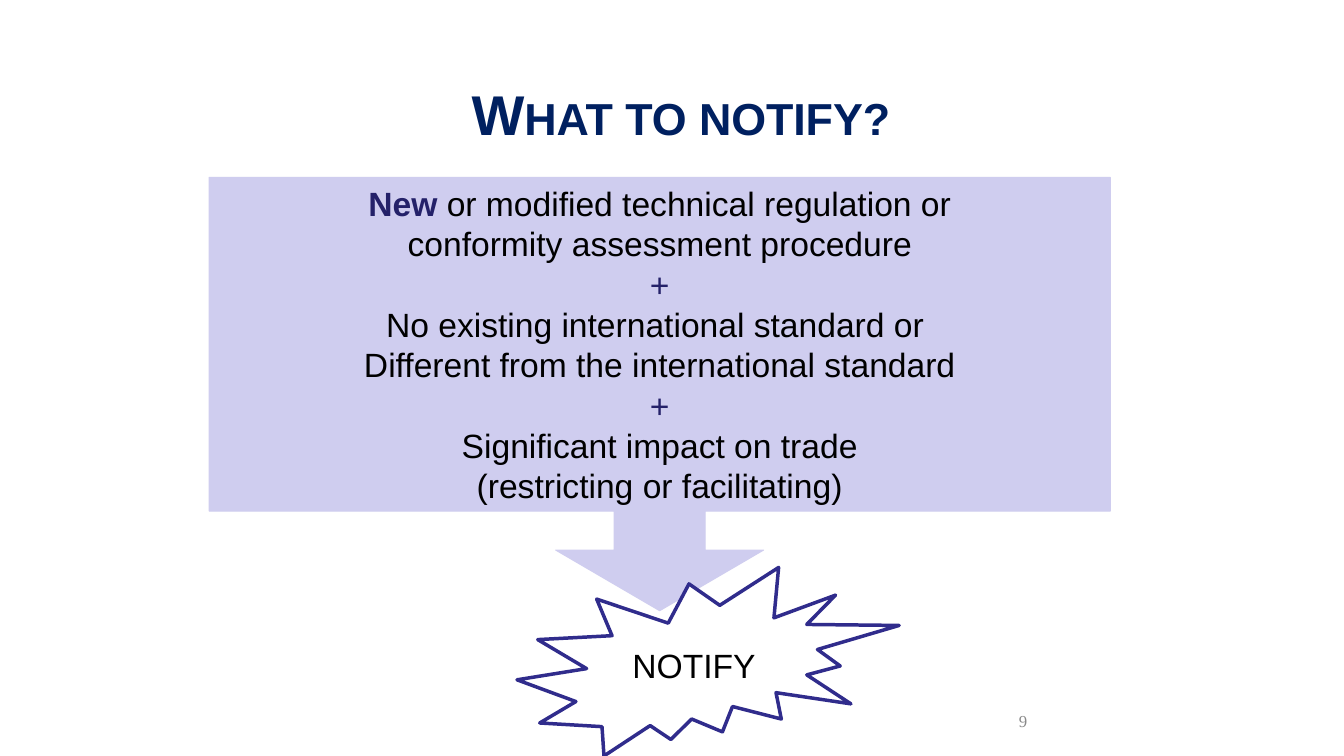
from pptx import Presentation
from pptx import util as u
from pptx.dml.color import RGBColor
from pptx.enum import shapes, text

NAVY, INDIGO, PURPLE = "002060", "242169", "302C8C"
LAVENDER, BLACK, WHITE, GREY = "CFCDEF", "000000", "FFFFFF", "898989"

CONDITIONS = [
    [("New ", INDIGO, True), ("or modified technical regulation or", BLACK, False)],
    [("conformity assessment procedure", BLACK, False)],
    [("+", INDIGO, False)],
    [("No existing international standard or ", BLACK, False)],
    [("Different from the international standard", BLACK, False)],
    [("+", INDIGO, False)],
    [("Significant impact on trade", BLACK, False)],
    [("(restricting or facilitating)", BLACK, False)],
]


def rgb(colour):
    """Turn a hex string into a colour."""
    return RGBColor.from_string(colour)


def cm_box(*lengths):
    """Turn left, top, width and height in centimetres into lengths."""
    return [u.Cm(length) for length in lengths]


def add_run(paragraph, words, size, colour, bold=False, font="Arial"):
    """Append one formatted run to a paragraph."""
    run = paragraph.add_run()
    run.text = words
    run.font.name = font
    run.font.size = u.Pt(size)
    run.font.bold = bold
    run.font.color.rgb = rgb(colour)
    return run


def write_lines(frame, lines, size=24):
    """Fill a text frame with centred lines made of coloured runs."""
    frame.vertical_anchor = text.MSO_ANCHOR.MIDDLE
    frame.word_wrap = False
    for index, line in enumerate(lines):
        paragraph = frame.paragraphs[0] if index == 0 else frame.add_paragraph()
        paragraph.alignment = text.PP_ALIGN.CENTER
        for words, colour, bold in line:
            add_run(paragraph, words, size, colour, bold)


def add_figure(slide, kind, box, fill, line, line_width, lines):
    """Add a filled, outlined preset shape with centred text."""
    figure = slide.shapes.add_shape(kind, *box)
    figure.shadow.inherit = False
    figure.fill.solid()
    figure.fill.fore_color.rgb = rgb(fill)
    figure.line.color.rgb = rgb(line)
    figure.line.width = u.Pt(line_width)
    write_lines(figure.text_frame, lines)
    return figure


def set_title(slide, words):
    """Place the title and set it in bold small capitals."""
    title = slide.shapes.title
    title.left, title.top, title.width, title.height = cm_box(5.54, 1.09, 23.24, 3.53)
    title.text_frame.vertical_anchor = text.MSO_ANCHOR.MIDDLE
    heading = title.text_frame.paragraphs[0]
    heading.alignment = text.PP_ALIGN.CENTER
    run = add_run(heading, words, 40, NAVY, bold=True)
    run.font._element.set("cap", "small")


def add_page_number(slide, number):
    """Add the right-aligned page number."""
    page = slide.shapes.add_textbox(*cm_box(19.71, 17.65, 6.43, 1.02))
    frame = page.text_frame
    frame.word_wrap = True
    frame.vertical_anchor = text.MSO_ANCHOR.MIDDLE
    frame.paragraphs[0].alignment = text.PP_ALIGN.RIGHT
    add_run(frame.paragraphs[0], number, 12, GREY, font="Times New Roman")


def main():
    """Build the slide and save it."""
    deck = Presentation()
    deck.slide_width, deck.slide_height = u.Cm(33.87), u.Cm(19.05)
    slide = deck.slides.add_slide(deck.slide_layouts[5])
    set_title(slide, "What to notify?")
    add_page_number(slide, "9")
    callout = add_figure(slide, shapes.MSO_SHAPE.DOWN_ARROW_CALLOUT,
                         cm_box(5.27, 4.47, 22.71, 10.92),
                         LAVENDER, LAVENDER, 0.75, CONDITIONS)
    for index, ratio in enumerate([0.21, 0.24, 0.14, 0.77]):
        callout.adjustments[index] = ratio
    add_figure(slide, shapes.MSO_SHAPE.EXPLOSION2, cm_box(13.03, 14.3, 9.63, 4.75),
               WHITE, PURPLE, 2.5, [[("NOTIFY", BLACK, False)]])
    deck.save("out.pptx")


if __name__ == "__main__":
    main()
